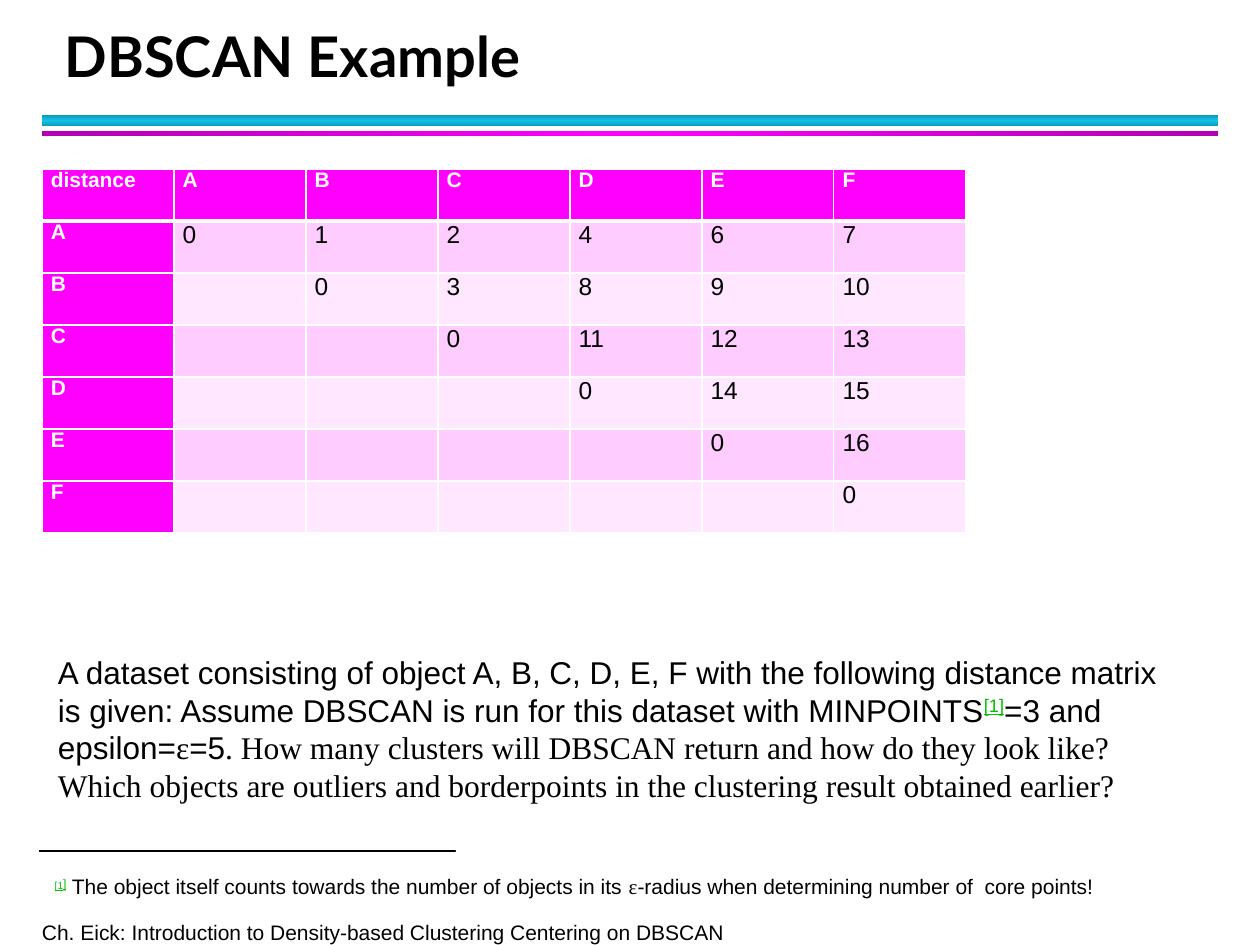
from copy import deepcopy

from lxml.etree import SubElement
from pptx import Presentation
from pptx.dml.color import RGBColor
from pptx.enum.shapes import MSO_SHAPE as Shape
from pptx.enum.text import MSO_ANCHOR as Anchor
from pptx.oxml.ns import qn
from pptx.util import Pt

BLACK = RGBColor(0x00, 0x00, 0x00)
WHITE = RGBColor(0xFF, 0xFF, 0xFF)
GREEN = RGBColor(0x00, 0xC0, 0x00)
CYAN = RGBColor(0x12, 0xC2, 0xE9)
DARK_CYAN = RGBColor(0x0E, 0x9B, 0xBA)
MAGENTA = RGBColor(0xFF, 0x00, 0xFF)
DARK_MAGENTA = RGBColor(0xB2, 0x00, 0xB2)
PINK = RGBColor(0xFF, 0xCC, 0xFF)
PALE_PINK = RGBColor(0xFF, 0xE7, 0xFF)

SANS = "Arial"
SERIF = "Times New Roman"
HEADING = "Lato"

OBJECTS = "ABCDEF"
DISTANCES = [
    [0, 1, 2, 4, 6, 7],
    [0, 3, 8, 9, 10],
    [0, 11, 12, 13],
    [0, 14, 15],
    [0, 16],
    [0],
]


class SlideBuilder:
    def __init__(self, page):
        self.page = page

    def style(self, font, size, name=SANS, color=BLACK, bold=False):
        font.size = Pt(size)
        font.name = name
        font.bold = bold
        font.color.rgb = color

    def bar(self, left, top, width, height):
        shape = self.page.shapes.add_shape(
            Shape.RECTANGLE, Pt(left), Pt(top), Pt(width), Pt(height))
        shape.shadow.inherit = False
        return shape

    def gradient_bar(self, left, top, width, height, edge, middle, angle):
        shape = self.bar(left, top, width, height)
        shape.line.fill.background()
        shape.fill.gradient()
        shape.fill.gradient_angle = angle
        stops = shape.fill.gradient_stops
        for stop, color, position in zip(stops, (edge, middle), (0, 0.5)):
            stop.color.rgb = color
            stop.position = position
        stop_list = shape.element.spPr.find(".//" + qn("a:gsLst"))
        last = deepcopy(stop_list[0])
        last.set("pos", "100000")
        stop_list.append(last)

    def rule(self, left, top, width, height):
        shape = self.bar(left, top, width, height)
        shape.fill.solid()
        shape.fill.fore_color.rgb = BLACK
        shape.line.color.rgb = BLACK
        shape.line.width = Pt(0.75)

    def text(self, left, top, width, height, spans, size, name=SANS, bold=False,
             anchor=Anchor.TOP, spacing=None, inset=True, wrap=True):
        box = self.page.shapes.add_textbox(Pt(left), Pt(top), Pt(width), Pt(height))
        frame = box.text_frame
        frame.word_wrap = wrap
        frame.vertical_anchor = anchor
        if not inset:
            frame.margin_left = frame.margin_right = 0
            frame.margin_top = frame.margin_bottom = 0
        para = frame.paragraphs[0]
        self.style(para.font, size, name, bold=bold)
        if spacing:
            para.line_spacing = Pt(spacing)
        for words, font_name in spans:
            span = para.add_run()
            span.text = words
            self.style(span.font, size, font_name or name, bold=bold)
        return para

    def mark_reference(self, span, size):
        span.font.size = Pt(size)
        span.font.underline = True
        span.font.color.rgb = GREEN
        span.font._element.set("baseline", "30000")

    def borders(self, cell, bottom):
        properties = cell._tc.get_or_add_tcPr()
        for side, width in (("L", 1), ("R", 1), ("T", 1), ("B", bottom)):
            line = SubElement(properties, qn("a:ln" + side), w=str(Pt(width)))
            fill = SubElement(line, qn("a:solidFill"))
            SubElement(fill, qn("a:srgbClr"), val=str(WHITE))

    def cell(self, cell, words, fill, size, color, bold, bottom):
        self.borders(cell, bottom)
        cell.fill.solid()
        cell.fill.fore_color.rgb = fill
        cell.margin_left = cell.margin_right = Pt(5.04)
        cell.margin_top = cell.margin_bottom = 0
        cell.text = words
        self.style(cell.text_frame.paragraphs[0].font, size, color=color, bold=bold)

    def distance_table(self, left, top, width, height):
        rows = [["distance", *OBJECTS]]
        for index, values in enumerate(DISTANCES):
            rows.append([OBJECTS[index]] + [""] * index + [str(v) for v in values])
        count = len(rows)
        table = self.page.shapes.add_table(
            count, count, Pt(left), Pt(top), Pt(width), Pt(height)).table
        table.first_row = table.horz_banding = False
        for column in table.columns:
            column.width = Pt(width / count)
        for r, row in enumerate(rows):
            table.rows[r].height = Pt(height / count)
            for c, words in enumerate(row):
                if r == 0 or c == 0:
                    look = MAGENTA, 12, WHITE, True
                else:
                    look = (PINK if r % 2 else PALE_PINK), 14, BLACK, False
                self.cell(table.cell(r, c), words, *look, bottom=1 if r else 3)


def main():
    deck = Presentation()
    deck.slide_width, deck.slide_height = Pt(720), Pt(540)
    builder = SlideBuilder(deck.slides.add_slide(deck.slide_layouts[6]))

    builder.gradient_bar(24, 66, 672, 6, DARK_CYAN, CYAN, 90)
    builder.gradient_bar(24, 75, 672, 3, DARK_MAGENTA, MAGENTA, 0)
    builder.text(24, 522, 659, 18, [
        ("Ch. Eick: Introduction to Density-based Clustering Centering on DBSCAN", None),
    ], 12, anchor=Anchor.BOTTOM, spacing=20, inset=False)
    builder.text(30, 12, 652, 42, [("DBSCAN Example", None)], 32, HEADING,
                 bold=True, anchor=Anchor.BOTTOM, spacing=36)
    builder.distance_table(24, 96.5, 528, 208)

    question = builder.text(26, 369.5, 656, 108.5, [
        ("A dataset consisting of object A, B, C, D, E, F with the following distance "
         "matrix is given: Assume DBSCAN is run for this dataset with MINPOINTS", None),
        ("[1]", None),
        ("=3 and epsilon=", None),
        ("ε", SERIF),
        ("=5", None),
        (". How many clusters will DBSCAN return and how do they look like? Which objects "
         "are outliers and borderpoints in the clustering result obtained earlier?", SERIF),
    ], 18)
    builder.mark_reference(question.runs[1], 18)

    builder.rule(22.5, 486, 237.5, 0.7)
    footnote = builder.text(24.2, 495.5, 618, 21.6, [
        ("[1", None),
        ("]", None),
        (" The object itself counts towards the number of objects in its ", None),
        ("ε", SERIF),
        ("-radius when determining number of  core points!", None),
    ], 12, anchor=Anchor.MIDDLE, wrap=False)
    builder.mark_reference(footnote.runs[0], 10)
    builder.mark_reference(footnote.runs[1], 12)

    deck.save("out.pptx")


if __name__ == "__main__":
    main()
